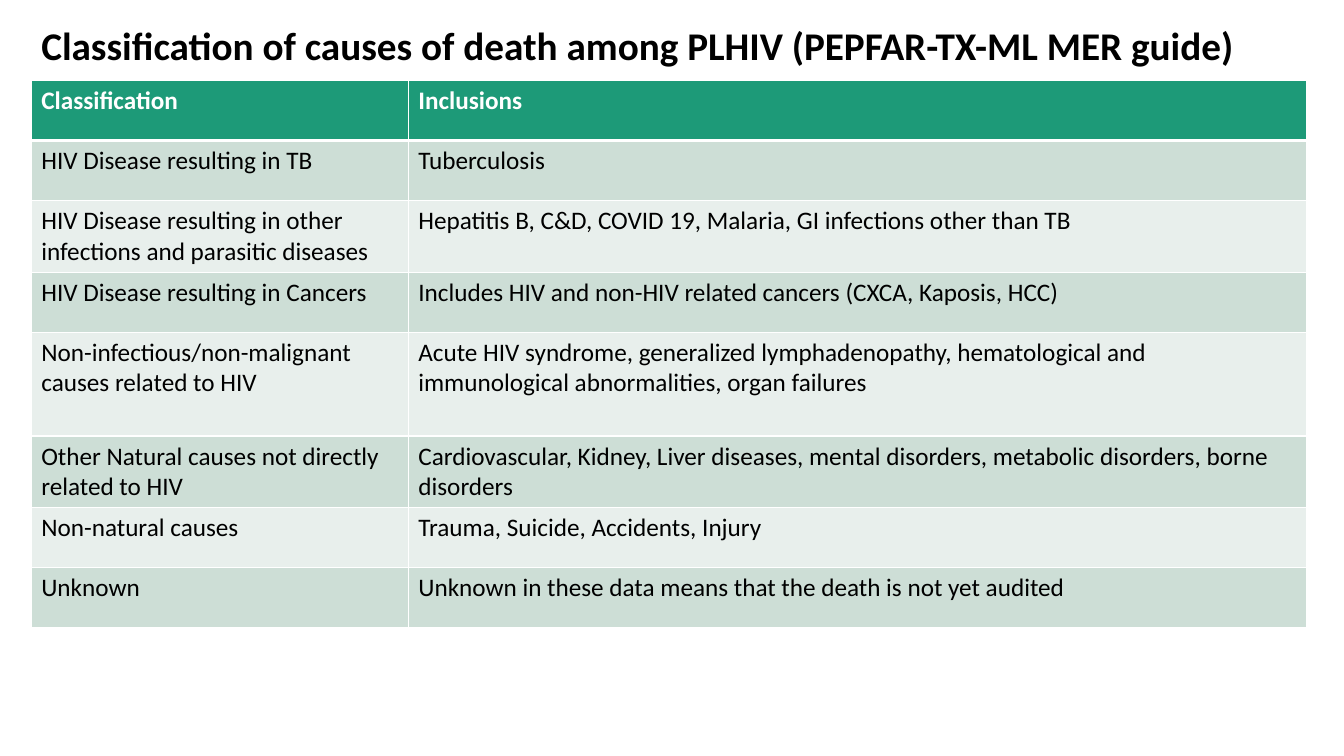
from lxml import etree
from pptx import Presentation
from pptx.dml.color import RGBColor
from pptx.enum.text import MSO_ANCHOR, MSO_AUTO_SIZE, PP_ALIGN
from pptx.oxml.ns import qn
from pptx.util import Inches, Pt

LEFT, MIDDLE = PP_ALIGN.LEFT, MSO_ANCHOR.MIDDLE
NO_AUTOFIT = MSO_AUTO_SIZE.NONE
TITLE_ONLY_LAYOUT = 5

TITLE = "Classification of causes of death among PLHIV (PEPFAR-TX-ML MER guide)"
ROWS = [
    ("Classification", "Inclusions"),
    ("HIV Disease resulting in TB", "Tuberculosis"),
    ("HIV Disease resulting in other infections and parasitic diseases",
     "Hepatitis B, C&D, COVID 19, Malaria, GI infections other than TB"),
    ("HIV Disease resulting in Cancers",
     "Includes HIV and non-HIV related cancers (CXCA, Kaposis, HCC)"),
    ("Non-infectious/non-malignant causes related to HIV",
     "Acute HIV syndrome, generalized lymphadenopathy, hematological and "
     "immunological abnormalities, organ failures"),
    ("Other Natural causes not directly related to HIV",
     "Cardiovascular, Kidney, Liver diseases, mental disorders, "
     "metabolic disorders, borne disorders"),
    ("Non-natural causes", "Trauma, Suicide, Accidents, Injury"),
    ("Unknown", "Unknown in these data means that the death is not yet audited"),
]
COLORS = {"header": "1D9A78", "odd": "CDDED6", "even": "E8EFEC",
          "white": "FFFFFF", "black": "000000"}
FONT = "Calibri"
LEFT_EDGE, TABLE_TOP = 0.31, 0.8
COLUMN_WIDTHS = (3.74, 8.91)
ROW_HEIGHT, TALL_ROW_HEIGHT, TALL_ROW = 0.595, 1.03, 4
THIN, THICK = 1, 3


def add_span(para, text, size, color, bold):
    span = para.add_run()
    span.text = text
    span.font.name = FONT
    span.font.size = Pt(size)
    span.font.bold = bold
    span.font.color.rgb = RGBColor.from_string(COLORS[color])


def add_borders(cell, widths):
    """Draw white cell borders; must run before the cell fill is set."""
    properties = cell._tc.get_or_add_tcPr()
    for side, width in widths.items():
        line = etree.SubElement(properties, qn(f"a:ln{side}"), w=str(Pt(width)))
        fill = etree.SubElement(line, qn("a:solidFill"))
        etree.SubElement(fill, qn("a:srgbClr"), val=COLORS["white"])


def add_title(page):
    title = page.shapes.title
    title.left, title.top = Inches(LEFT_EDGE), Inches(0.14)
    title.width, title.height = Inches(12.11), Inches(0.66)
    frame = title.text_frame
    frame.word_wrap = True
    frame.auto_size = NO_AUTOFIT
    frame.vertical_anchor = MIDDLE
    para = frame.paragraphs[0]
    para.alignment = LEFT
    para.line_spacing = 0.9
    add_span(para, TITLE, 28, "black", True)


def add_causes_table(page):
    heights = [TALL_ROW_HEIGHT if i == TALL_ROW else ROW_HEIGHT
               for i in range(len(ROWS))]
    table = page.shapes.add_table(
        len(ROWS), len(COLUMN_WIDTHS), Inches(LEFT_EDGE), Inches(TABLE_TOP),
        Inches(sum(COLUMN_WIDTHS)), Inches(sum(heights))).table
    for column, width in zip(table.columns, COLUMN_WIDTHS):
        column.width = Inches(width)
    for i, texts in enumerate(ROWS):
        table.rows[i].height = Inches(heights[i])
        is_header = i == 0
        fill = "header" if is_header else "odd" if i % 2 else "even"
        borders = {"L": THIN, "R": THIN,
                   "T": THICK if i == 1 else THIN,
                   "B": THICK if is_header else THIN}
        for j, text in enumerate(texts):
            cell = table.cell(i, j)
            add_borders(cell, borders)
            cell.fill.solid()
            cell.fill.fore_color.rgb = RGBColor.from_string(COLORS[fill])
            add_span(cell.text_frame.paragraphs[0], text, 18,
                     "white" if is_header else "black", is_header)


def main():
    deck = Presentation()
    deck.slide_width, deck.slide_height = Inches(13.33), Inches(7.5)
    page = deck.slides.add_slide(deck.slide_layouts[TITLE_ONLY_LAYOUT])
    add_title(page)
    add_causes_table(page)
    deck.save("out.pptx")


if __name__ == "__main__":
    main()
